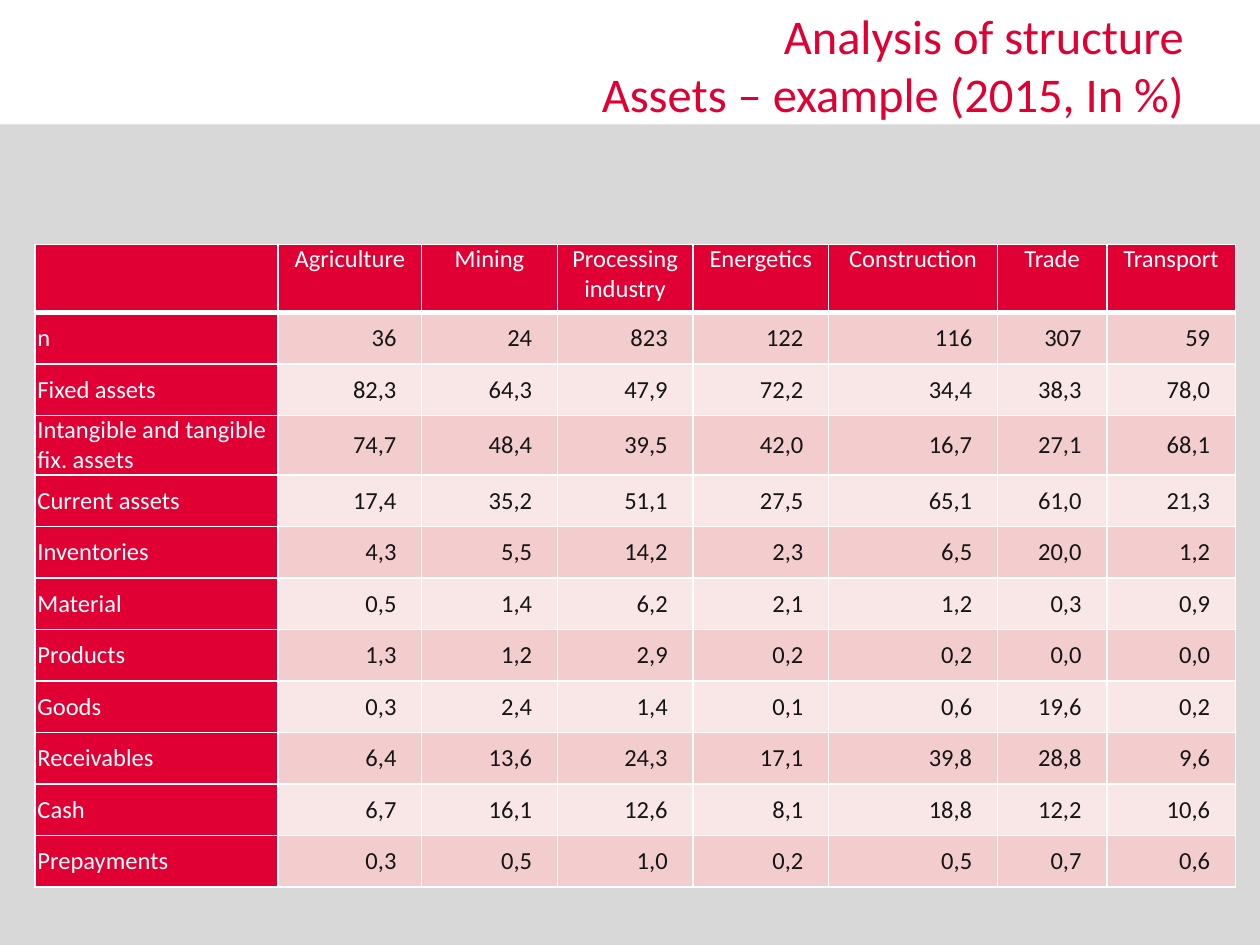
from lxml import etree
from pptx import Presentation
from pptx.dml.color import RGBColor
from pptx.enum.shapes import MSO_SHAPE
from pptx.enum.text import MSO_ANCHOR, MSO_AUTO_SIZE, PP_ALIGN
from pptx.oxml.ns import qn
from pptx.util import Pt

RECTANGLE = MSO_SHAPE.RECTANGLE
TOP, MIDDLE = MSO_ANCHOR.TOP, MSO_ANCHOR.MIDDLE
LEFT, CENTER, RIGHT = PP_ALIGN.LEFT, PP_ALIGN.CENTER, PP_ALIGN.RIGHT
NO_AUTOFIT = MSO_AUTO_SIZE.NONE

RED, WHITE, GREY, INK = "E00034", "FFFFFF", "D8D8D8", "151515"
BANDS = ["F3CCCE", "F9E7E8"]

TITLE = "Analysis of structure\vAssets – example (2015, In %)"
COLUMN_WIDTHS = [139, 82, 77.5, 77.5, 77.5, 96.5, 62.5, 73.5]
HEADER_HEIGHT, ROW_HEIGHT = 38.9, 29.45
SECTORS = ["", "Agriculture", "Mining", "Processing industry", "Energetics",
           "Construction", "Trade", "Transport"]
ASSETS = [
    ["n", "36", "24", "823", "122", "116", "307", "59"],
    ["Fixed assets", "82,3", "64,3", "47,9", "72,2", "34,4", "38,3", "78,0"],
    ["Intangible and tangible fix. assets", "74,7", "48,4", "39,5", "42,0", "16,7", "27,1", "68,1"],
    ["Current assets", "17,4", "35,2", "51,1", "27,5", "65,1", "61,0", "21,3"],
    ["Inventories", "4,3", "5,5", "14,2", "2,3", "6,5", "20,0", "1,2"],
    ["Material", "0,5", "1,4", "6,2", "2,1", "1,2", "0,3", "0,9"],
    ["Products", "1,3", "1,2", "2,9", "0,2", "0,2", "0,0", "0,0"],
    ["Goods", "0,3", "2,4", "1,4", "0,1", "0,6", "19,6", "0,2"],
    ["Receivables", "6,4", "13,6", "24,3", "17,1", "39,8", "28,8", "9,6"],
    ["Cash", "6,7", "16,1", "12,6", "8,1", "18,8", "12,2", "10,6"],
    ["Prepayments", "0,3", "0,5", "1,0", "0,2", "0,5", "0,7", "0,6"],
]


def color(value):
    return RGBColor.from_string(value)


class Page:
    font_name = "Calibri"
    title_size = 27.7
    table_size = 14
    cell_margin = 1.4
    number_margin = 14.4

    def __init__(self, deck):
        self.slide = deck.slides.add_slide(deck.slide_layouts[5])

    def format_text(self, paragraph, size, ink, alignment):
        paragraph.alignment = alignment
        for font in [paragraph.font] + [span.font for span in paragraph.runs]:
            font.name = self.font_name
            font.size = Pt(size)
            font.bold = False
            font.color.rgb = color(ink)

    def panel(self, left, top, width, height, fill):
        box = self.slide.shapes.add_shape(RECTANGLE, Pt(left), Pt(top), Pt(width), Pt(height))
        box.shadow.inherit = False
        box.fill.solid()
        box.fill.fore_color.rgb = color(fill)
        box.line.fill.background()

    def title(self, text, left, top, width, height):
        box = self.slide.shapes.title
        box.left, box.top, box.width, box.height = Pt(left), Pt(top), Pt(width), Pt(height)
        frame = box.text_frame
        frame.text = text
        frame.word_wrap = True
        frame.auto_size = NO_AUTOFIT
        frame.vertical_anchor = MIDDLE
        self.format_text(frame.paragraphs[0], self.title_size, RED, RIGHT)

    def border(self, cell, side, width):
        properties = cell._tc.get_or_add_tcPr()
        line = etree.SubElement(properties, qn(f"a:ln{side}"), w=str(Pt(width)))
        fill = etree.SubElement(line, qn("a:solidFill"))
        etree.SubElement(fill, qn("a:srgbClr"), val=WHITE)

    def cell(self, cell, text, row, column):
        header, label = row == 0, column == 0
        number = not header and not label
        for side in "LRTB":
            self.border(cell, side, 3 if header and side == "B" else 1)
        cell.fill.solid()
        cell.fill.fore_color.rgb = color(BANDS[(row - 1) % 2] if number else RED)
        cell.margin_left = Pt(self.cell_margin)
        cell.margin_right = Pt(self.number_margin if number else self.cell_margin)
        cell.margin_top = cell.margin_bottom = 0
        cell.vertical_anchor = TOP if header else MIDDLE
        cell.text_frame.text = text
        alignment = CENTER if header else LEFT if label else RIGHT
        self.format_text(cell.text_frame.paragraphs[0], self.table_size,
                         INK if number else WHITE, alignment)

    def table(self, rows, left, top, widths, heights):
        frame = self.slide.shapes.add_table(len(rows), len(widths), Pt(left), Pt(top),
                                            Pt(sum(widths)), Pt(sum(heights)))
        table = frame.table
        table.horz_banding = False
        for column, width in zip(table.columns, widths):
            column.width = Pt(width)
        for row, height in zip(table.rows, heights):
            row.height = Pt(height)
        for row, texts in enumerate(rows):
            for column, text in enumerate(texts):
                self.cell(table.cell(row, column), text, row, column)


def main():
    deck = Presentation()
    deck.slide_width, deck.slide_height = Pt(720), Pt(540)
    page = Page(deck)
    page.panel(0, 71, 720, 469, GREY)
    page.title(TITLE, 183.6, 13, 500.4, 47.5)
    page.table([SECTORS] + ASSETS, 20, 139.7, COLUMN_WIDTHS,
               [HEADER_HEIGHT] + [ROW_HEIGHT] * len(ASSETS))
    deck.save("out.pptx")


if __name__ == "__main__":
    main()
